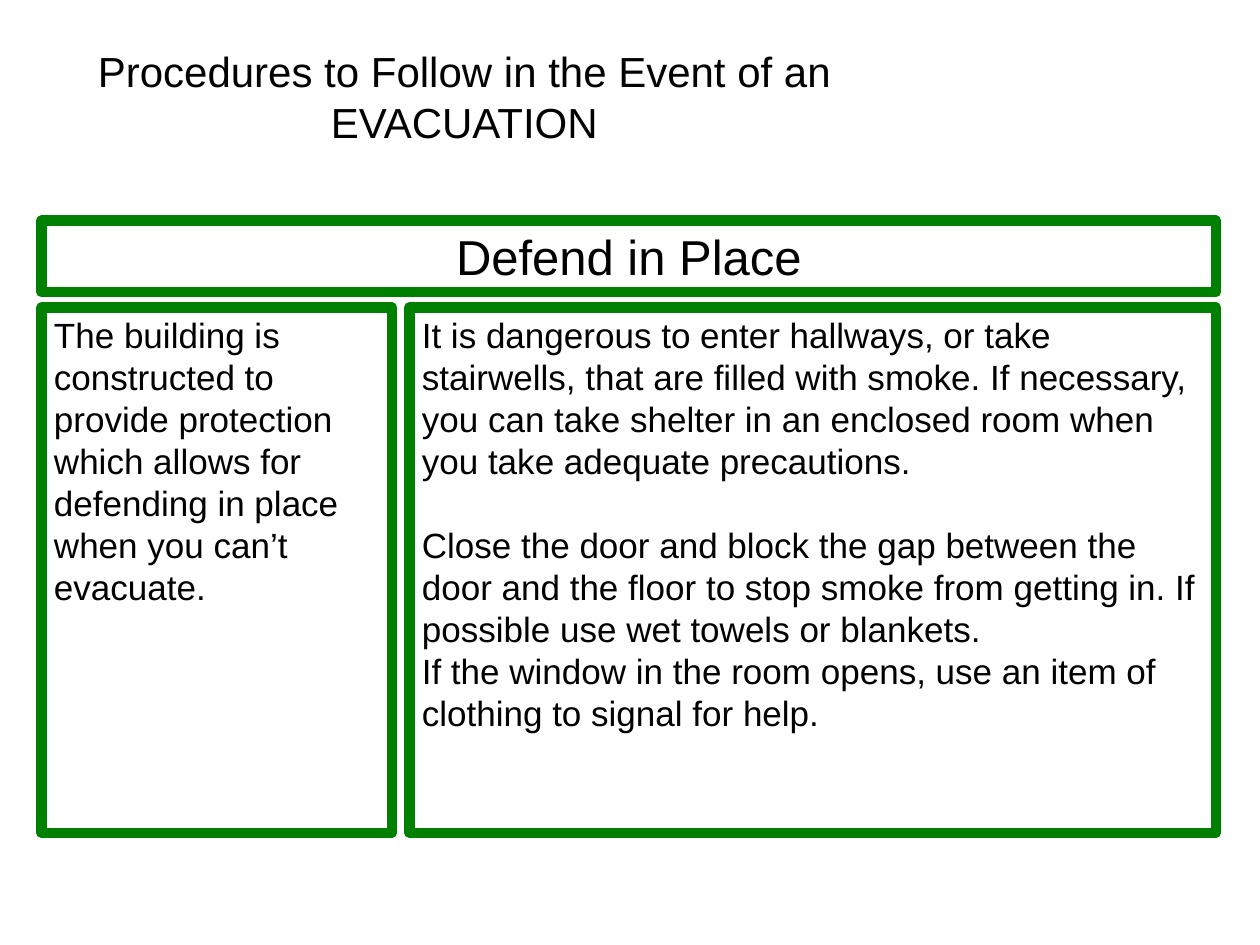
from pptx import Presentation
from pptx.dml.color import RGBColor
from pptx.enum.shapes import MSO_SHAPE
from pptx.enum.text import MSO_ANCHOR, PP_ALIGN
from pptx.util import Inches, Pt

BLACK = RGBColor(0x00, 0x00, 0x00)
GREEN = RGBColor(0x00, 0x80, 0x00)
RECTANGLE = MSO_SHAPE.RECTANGLE
TOP, MIDDLE = MSO_ANCHOR.TOP, MSO_ANCHOR.MIDDLE
LEFT, CENTER = PP_ALIGN.LEFT, PP_ALIGN.CENTER
TITLE_ONLY = 5

prs = Presentation()
prs.slide_width, prs.slide_height = Inches(10), Inches(7.5)
slide = prs.slides.add_slide(prs.slide_layouts[TITLE_ONLY])


def write(frame, paragraphs, size, align, anchor):
    """Fill a text frame with (text, space before in points) paragraphs."""
    frame.word_wrap = True
    frame.vertical_anchor = anchor
    for index, (text, gap) in enumerate(paragraphs):
        paragraph = frame.paragraphs[0] if index == 0 else frame.add_paragraph()
        paragraph.alignment = align
        paragraph.space_before = Pt(gap)
        run = paragraph.add_run()
        run.text = text
        run.font.name = "Arial"
        run.font.size = Pt(size)
        run.font.color.rgb = BLACK


# Title
title = slide.shapes.title
title.left, title.top = Inches(0.19), Inches(0.31)
title.width, title.height = Inches(6.99), Inches(0.91)
write(title.text_frame,
      [("Procedures to Follow in the Event of an EVACUATION", 0)],
      24, CENTER, MIDDLE)

# Green frames: heading across the top, reason on the left, advice on the right
heading = [("Defend in Place", 0)]
reason = [("The building is constructed to provide protection which allows for "
           "defending in place when you can’t evacuate.", 0)]
advice = [
    ("It is dangerous to enter hallways, or take stairwells, that are filled "
     "with smoke. If necessary, you can take shelter in an enclosed room when "
     "you take adequate precautions.", 0),
    ("Close the door and block the gap between the door and the floor to stop "
     "smoke from getting in. If possible use wet towels or blankets.", 24),
    ("If the window in the room opens, use an item of clothing to signal for "
     "help.", 0),
]
panels = [
    (0.33, 1.75, 9.32, 0.57, heading, 28, CENTER, MIDDLE),
    (0.33, 2.44, 2.78, 4.17, reason, 20, LEFT, TOP),
    (3.25, 2.44, 6.4, 4.17, advice, 20, LEFT, TOP),
]
for left, top, width, height, paragraphs, size, align, anchor in panels:
    panel = slide.shapes.add_shape(RECTANGLE, Inches(left), Inches(top),
                                   Inches(width), Inches(height))
    panel.shadow.inherit = False
    panel.fill.background()
    panel.line.color.rgb = GREEN
    panel.line.width = Pt(6)
    write(panel.text_frame, paragraphs, size, align, anchor)

prs.save("out.pptx")
